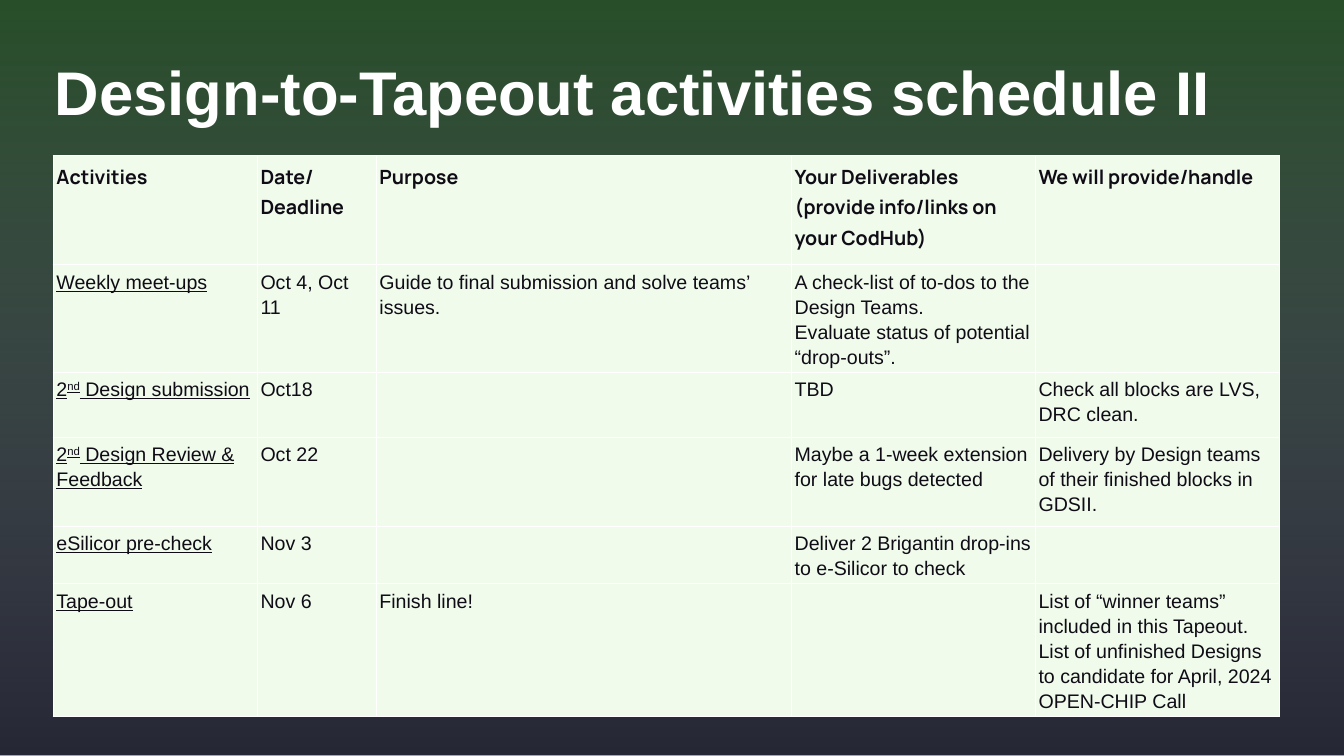
from lxml import etree
from pptx import Presentation
from pptx.dml.color import RGBColor
from pptx.enum.shapes import MSO_SHAPE
from pptx.enum.text import MSO_ANCHOR, MSO_AUTO_SIZE, PP_ALIGN
from pptx.oxml.ns import qn
from pptx.util import Inches, Pt

RECTANGLE = MSO_SHAPE.RECTANGLE
TOP = MSO_ANCHOR.TOP
LEFT = PP_ALIGN.LEFT
NO_AUTOFIT = MSO_AUTO_SIZE.NONE

WHITE = RGBColor(0xFE, 0xFF, 0xFE)
INK = RGBColor(0x0F, 0x0C, 0x16)
MINT = RGBColor(0xF0, 0xFB, 0xEC)
GREEN = RGBColor(0x30, 0x66, 0x2C)
LAVENDER = RGBColor(0xA2, 0xA5, 0xB6)
NIGHT = RGBColor(0x15, 0x16, 0x23)

MARGIN = Inches(1.05)
COLUMN_WIDTHS = [4.05, 2.36, 8.24, 4.84, 4.84]
ROW_HEIGHTS = [2.16, 2.12, 1.29, 1.77, 1.13, 2.64]

# Line breaks separate paragraphs; carets enclose superscripts
SCHEDULE = [
    ["Activities", "Date/\nDeadline", "Purpose",
     "Your Deliverables (provide info/links on your CodHub)", "We will provide/handle"],
    ["Weekly meet-ups", "Oct 4, Oct 11",
     "Guide to final submission and solve teams’ issues.",
     "A check-list of to-dos to the Design Teams.\n"
     "Evaluate status of potential “drop-outs”.", ""],
    ["2^nd^ Design submission", "Oct18", "", "TBD",
     "Check all blocks are LVS, DRC clean."],
    ["2^nd^ Design Review & Feedback", "Oct 22", "",
     "Maybe a 1-week extension for late bugs detected",
     "Delivery by Design teams of their finished blocks in GDSII."],
    ["eSilicor pre-check", "Nov 3", "",
     "Deliver 2 Brigantin drop-ins to e-Silicor to check", ""],
    ["Tape-out", "Nov 6", "Finish line!", "",
     "List of “winner teams” included in this Tapeout.\n"
     "List of unfinished Designs to candidate for April, 2024 OPEN-CHIP Call"],
]


def write_text(text_frame, text, size=28, font="Arial", color=INK,
               bold=False, underline=False, line_spacing=1.15):
    for index, line in enumerate(text.split("\n")):
        paragraph = text_frame.add_paragraph() if index else text_frame.paragraphs[0]
        paragraph.alignment = LEFT
        paragraph.line_spacing = line_spacing
        for part, piece in enumerate(line.split("^")):
            run = paragraph.add_run()
            run.text = piece
            run.font.size = Pt(size)
            run.font.name = font
            run.font.bold = bold
            run.font.underline = underline
            run.font.color.rgb = color
            if part % 2:
                run.font._element.set("baseline", "30000")


def fill_gradient(fill, colors):
    fill.gradient()
    fill.gradient_angle = 270
    for stop, color, position in zip(fill.gradient_stops, colors, (0, 1)):
        stop.color.rgb = color
        stop.position = position


presentation = Presentation()
presentation.slide_width = Inches(26.67)
presentation.slide_height = Inches(15)
slide = presentation.slides.add_slide(presentation.slide_layouts[5])

# Background with a translucent dark veil over it
fill_gradient(slide.background.fill, (GREEN, LAVENDER))
veil = slide.shapes.add_shape(RECTANGLE, 0, Inches(-0.03),
                              presentation.slide_width, presentation.slide_height)
veil.shadow.inherit = False
veil.line.fill.background()
fill_gradient(veil.fill, (NIGHT, NIGHT))
for color_element, opacity in zip(veil._element.spPr.iter(qn("a:srgbClr")), (29, 88)):
    etree.SubElement(color_element, qn("a:alpha")).set("val", str(opacity * 1000))
slide.shapes._spTree.insert(2, veil._element)

# Title
title = slide.shapes.title
title.left, title.top = MARGIN, Inches(1.02)
title.width, title.height = Inches(23.39), Inches(2.38)
title_frame = title.text_frame
title_frame.word_wrap = True
title_frame.auto_size = NO_AUTOFIT
title_frame.vertical_anchor = TOP
title_frame.margin_left = title_frame.margin_right = Inches(0.04)
title_frame.margin_top = title_frame.margin_bottom = Inches(0.04)
write_text(title_frame, "Design-to-Tapeout activities schedule II",
           size=88, color=WHITE, bold=True, line_spacing=1.0)

# Schedule table
table = slide.shapes.add_table(
    len(ROW_HEIGHTS), len(COLUMN_WIDTHS), MARGIN, Inches(3.09),
    Inches(sum(COLUMN_WIDTHS)), Inches(sum(ROW_HEIGHTS))).table
table.horz_banding = False
for column, width in zip(table.columns, COLUMN_WIDTHS):
    column.width = Inches(width)
for row, height in zip(table.rows, ROW_HEIGHTS):
    row.height = Inches(height)

for row_index, entries in enumerate(SCHEDULE):
    header = row_index == 0
    for column_index, entry in enumerate(entries):
        cell = table.cell(row_index, column_index)
        cell.margin_left = cell.margin_right = Inches(0.07)
        cell.margin_top = cell.margin_bottom = Inches(0.07)
        # Borders come before the fill in the cell properties
        for side in ("a:lnL", "a:lnR", "a:lnT", "a:lnB"):
            border = etree.SubElement(cell._tc.get_or_add_tcPr(), qn(side), w=str(Pt(1)))
            border_fill = etree.SubElement(border, qn("a:solidFill"))
            etree.SubElement(border_fill, qn("a:srgbClr"), val=str(WHITE))
        cell.fill.solid()
        cell.fill.fore_color.rgb = MINT
        if entry:
            write_text(cell.text_frame, entry, font="Manrope" if header else "Arial",
                       bold=header, underline=column_index == 0 and not header)

presentation.save("out.pptx")
